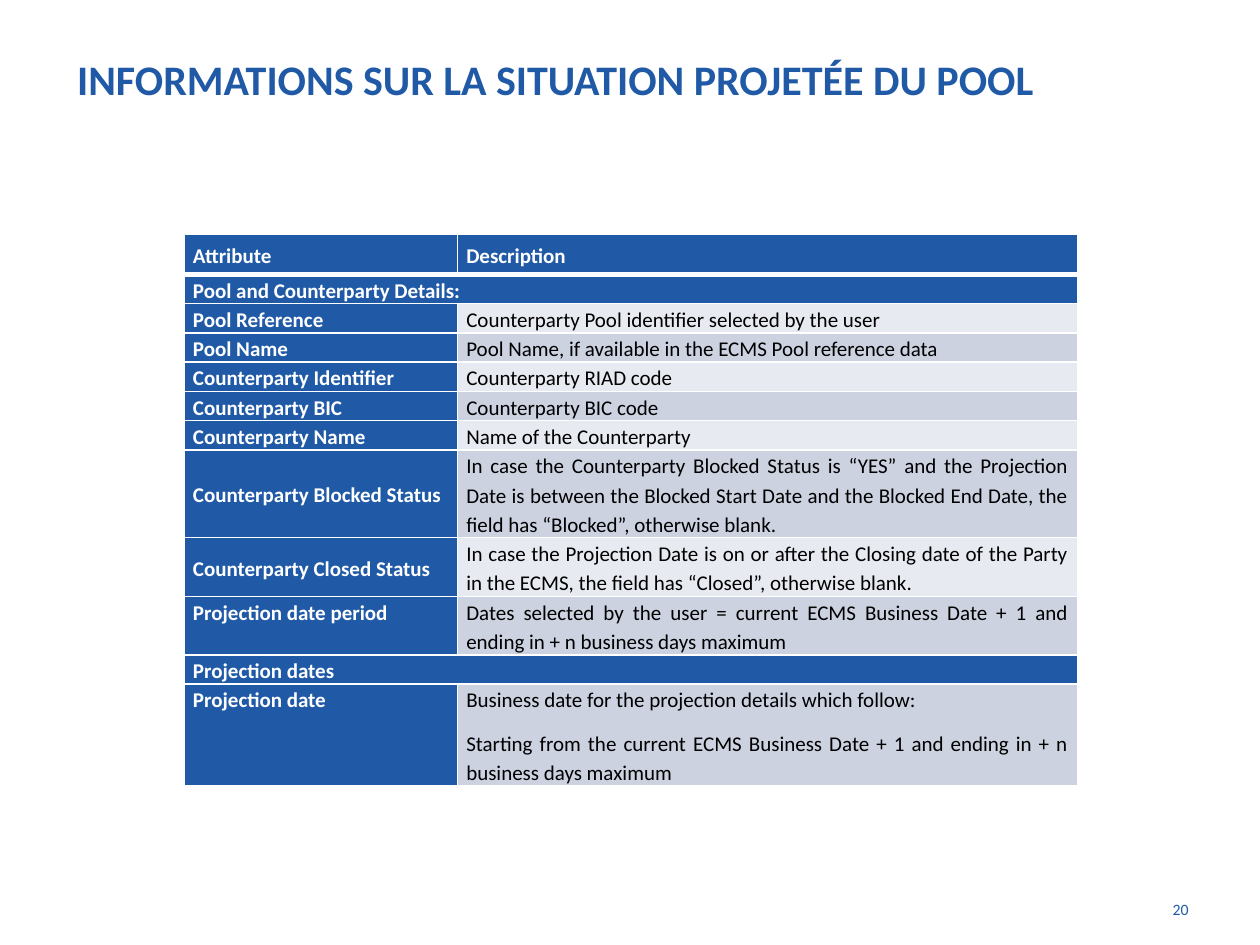
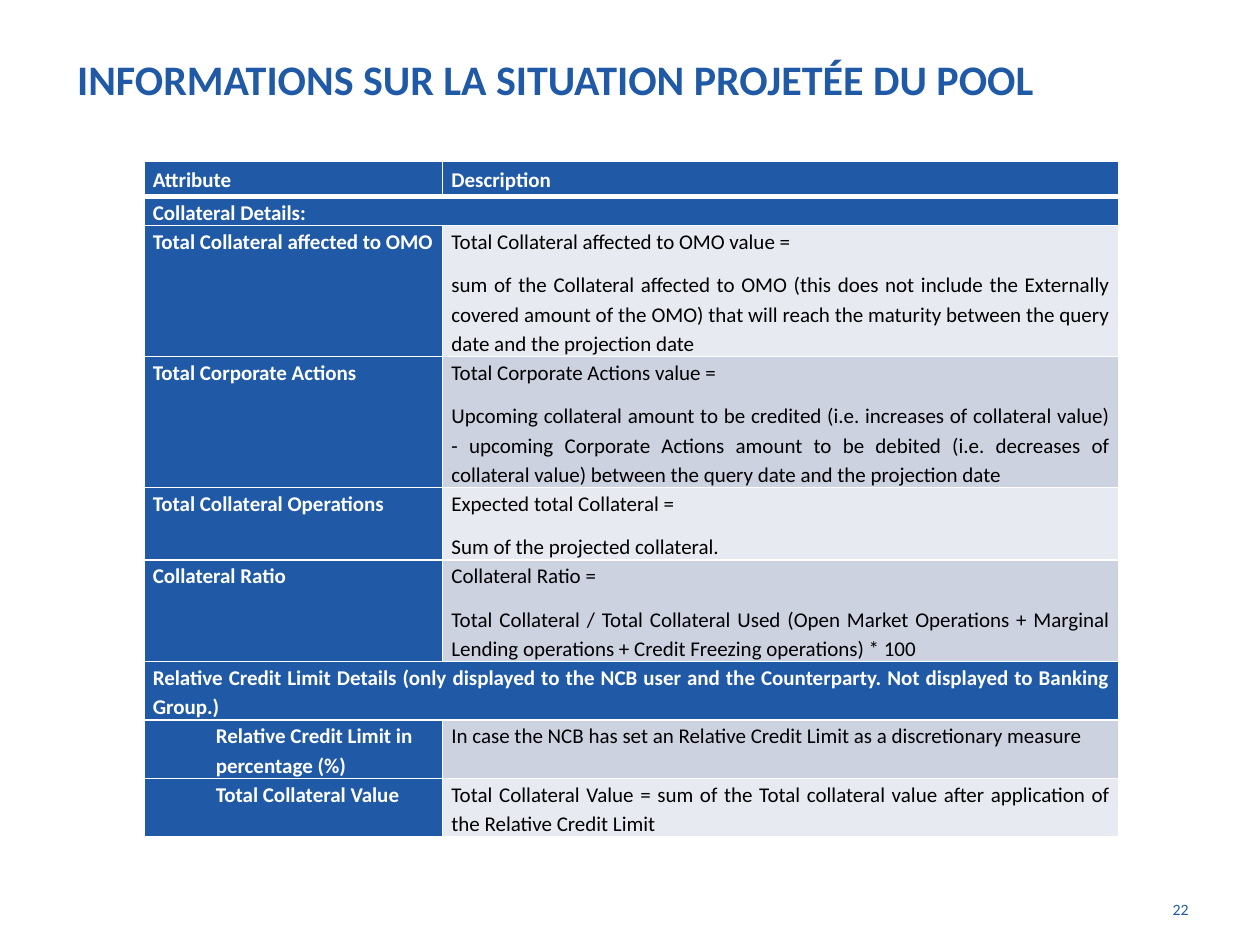
from lxml.etree import SubElement
from pptx import Presentation
from pptx.dml.color import RGBColor
from pptx.enum.text import MSO_ANCHOR as ANCHOR, MSO_AUTO_SIZE as AUTO, PP_ALIGN as ALIGN
from pptx.oxml.ns import qn
from pptx.util import Cm, Pt

COLORS = {"blue": "205AA7", "white": "FFFFFF", "black": "000000",
          "light": "E8EAF1", "dark": "CDD2E1"}
TITLE = "INFORMATIONS SUR LA SITUATION PROJETÉE DU POOL"
LINE_H, PARA_GAP = 0.59, 0.28
CENTRED = {"Attribute", "Counterparty Blocked Status", "Counterparty Closed Status"}
INDENTED = {"Relative Credit Limit in percentage (%)", "Total Collateral Value"}
CELL = {"margin_left": Cm(0.18), "margin_right": Cm(0.18), "margin_top": 0, "margin_bottom": 0}
PARA = {"line_spacing": 1.15, "space_after": Pt(8)}

SLIDES = [
    {"number": "20", "left": 3.71, "top": 4.72, "cols": (5.51, 12.5), "header": 0.81, "rows": [
        ("Pool and Counterparty Details:", [], 1),
        ("Pool Reference", ["Counterparty Pool identifier selected by the user"], 1),
        ("Pool Name", ["Pool Name, if available in the ECMS Pool reference data"], 1),
        ("Counterparty Identifier", ["Counterparty RIAD code"], 1),
        ("Counterparty BIC", ["Counterparty BIC code"], 1),
        ("Counterparty Name", ["Name of the Counterparty"], 1),
        ("Counterparty Blocked Status",
         ["In case the Counterparty Blocked Status is “YES” and the Projection Date is between "
          "the Blocked Start Date and the Blocked End Date, the field has “Blocked”, "
          "otherwise blank."], 3),
        ("Counterparty Closed Status",
         ["In case the Projection Date is on or after the Closing date of the Party in the ECMS, "
          "the field has “Closed”, otherwise blank."], 2),
        ("Projection date period",
         ["Dates selected by the user = current ECMS Business Date + 1 and ending in "
          "+ n business days maximum"], 2),
        ("Projection dates", [], 1),
        ("Projection date",
         ["Business date for the projection details which follow:",
          "Starting from the current ECMS Business Date + 1 and ending in "
          "+ n business days maximum"], 3),
    ]},
    {"number": "22", "left": 2.9, "top": 3.25, "cols": (6.02, 13.64), "header": 0.71, "rows": [
        ("Collateral Details:", [], 1),
        ("Total Collateral affected to OMO",
         ["Total Collateral affected to OMO value =",
          "sum of the Collateral affected to OMO (this does not include the Externally covered "
          "amount of the OMO) that will reach the maturity between the query date and the "
          "projection date"], 4),
        ("Total Corporate Actions",
         ["Total Corporate Actions value =",
          "Upcoming collateral amount to be credited (i.e. increases of collateral value) - "
          "upcoming Corporate Actions amount to be debited (i.e. decreases of collateral value) "
          "between the query date and the projection date"], 4),
        ("Total Collateral Operations",
         ["Expected total Collateral =", "Sum of the projected collateral."], 2),
        ("Collateral Ratio",
         ["Collateral Ratio =",
          "Total Collateral / Total Collateral Used (Open Market Operations + Marginal Lending "
          "operations + Credit Freezing operations) * 100"], 3),
        ("Relative Credit Limit Details (only displayed to the NCB user and the Counterparty. "
         "Not displayed to Banking Group.)", [], 2),
        ("Relative Credit Limit in percentage (%)",
         ["In case the NCB has set an Relative Credit Limit as a discretionary measure"], 2),
        ("Total Collateral Value",
         ["Total Collateral Value = sum of the Total collateral value after application of the "
          "Relative Credit Limit"], 2),
    ]},
]


def write(p, text, size, color, bold, align):
    p.alignment = align
    r = p.add_run()
    r.text = text
    for name, value in {"name": "Calibri", "size": Pt(size), "bold": bold}.items():
        setattr(r.font, name, value)
    r.font.color.rgb = RGBColor.from_string(COLORS[color])


def add_borders(cell, widths):
    tc_pr = cell._tc.get_or_add_tcPr()
    for side, width in zip("LRTB", widths):
        ln = SubElement(tc_pr, qn(f"a:ln{side}"), w=str(Pt(width)))
        fill = SubElement(ln, qn("a:solidFill"))
        SubElement(fill, qn("a:srgbClr"), val=COLORS["white"])


prs = Presentation()
prs.slide_width, prs.slide_height = Cm(25.4), Cm(19.05)

for page in SLIDES:
    s = prs.slides.add_slide(prs.slide_layouts[5])
    title = s.shapes.title
    for name, value in {"left": 1.3, "top": 0, "width": 22.86, "height": 3.18}.items():
        setattr(title, name, Cm(value))
    tf = title.text_frame
    for name, value in {"word_wrap": True, "auto_size": AUTO.NONE,
                        "vertical_anchor": ANCHOR.MIDDLE}.items():
        setattr(tf, name, value)
    title_top = Cm(1.27)
    title.height = Cm(3.18)
    write(tf.paragraphs[0], TITLE, 24, "blue", True, ALIGN.LEFT)

    sp = s.shapes.add_textbox(Cm(22.71), Cm(18.01), Cm(1.5), Cm(0.99))
    sp.text_frame.word_wrap = True
    write(sp.text_frame.paragraphs[0], page["number"], 9, "blue", False, ALIGN.RIGHT)

    rows = [("Attribute", ["Description"], 1)] + page["rows"]
    heights = [page["header"]] + [
        lines * LINE_H + max(len(texts) - 1, 0) * PARA_GAP for _, texts, lines in page["rows"]]
    table = s.shapes.add_table(len(rows), 2, Cm(page["left"]), Cm(page["top"]),
                               Cm(sum(page["cols"])), Cm(sum(heights))).table
    for col, width in zip(table.columns, page["cols"]):
        col.width = Cm(width)

    for i, (label, texts, _) in enumerate(rows):
        table.rows[i].height = Cm(heights[i])
        if not texts:
            table.cell(i, 0).merge(table.cell(i, 1))
        for j, paragraphs in enumerate(([label], texts)):
            cell = table.cell(i, j)
            for name, value in CELL.items():
                setattr(cell, name, value)
            cell.vertical_anchor = ANCHOR.MIDDLE if label in CENTRED else ANCHOR.TOP
            add_borders(cell, (1, 1, 3 if i == 1 else 1, 3 if i == 0 else 1))
            heading = i == 0 or j == 0 or not texts
            fill = "blue" if heading else ("light", "dark")[i % 2]
            cell.fill.solid()
            cell.fill.fore_color.rgb = RGBColor.from_string(COLORS[fill])
            indented = j == 0 and label in INDENTED
            align = ALIGN.LEFT if i == 0 or indented else ALIGN.JUSTIFY
            for k, text in enumerate(paragraphs):
                tf = cell.text_frame
                p = tf.add_paragraph() if k else tf.paragraphs[0]
                for name, value in PARA.items():
                    setattr(p, name, value)
                if indented:
                    p._p.get_or_add_pPr().set("marL", str(Cm(1.27)))
                write(p, text, 12, "white" if heading else "black", heading, align)

prs.save("out.pptx")
